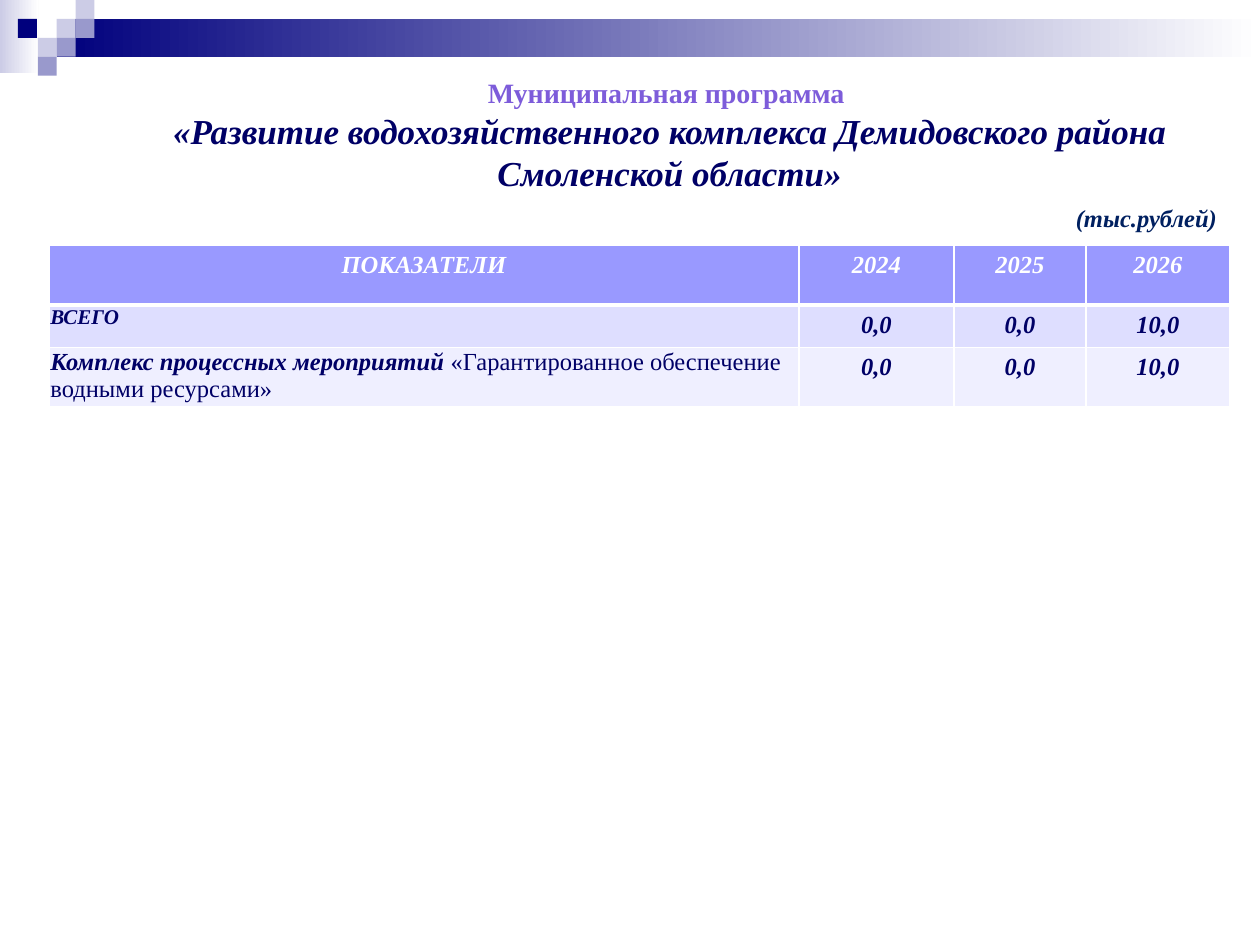
from dataclasses import dataclass

from lxml.etree import SubElement
from pptx import Presentation
from pptx.dml.color import RGBColor
from pptx.enum.shapes import MSO_SHAPE
from pptx.enum.text import MSO_ANCHOR, MSO_AUTO_SIZE, PP_ALIGN
from pptx.oxml.ns import qn
from pptx.util import Inches, Pt

WIDE, HIGH, UNIT = 10, 7.5, 0.15
NAVY, INK, PALE, MID, WHITE = "00007D", "000066", "CCCCE6", "9999CC", "FFFFFF"


@dataclass
class Tile:
    col: float
    row: float
    fill: str
    cols: float = 1
    rows: float = 1
    fade: str = ""


@dataclass
class Band:
    fill: str
    high: float
    ink: str
    label: list
    values: list
    edge: float = 1


TILES = [
    Tile(0, 0, PALE, 2.05, 3.87, WHITE),
    Tile(3, 1, NAVY, WIDE / UNIT - 3, 2, WHITE),
    Tile(3, 1, PALE),
    Tile(4, 0, PALE),
    Tile(4, 1, MID),
    Tile(2, 2, PALE),
    Tile(0.95, 1, NAVY),
    Tile(3, 2, MID),
    Tile(2, 3, MID),
]
WIDTHS = [5.95, 1.23, 1.05, 1.14]
BANDS = [
    Band("9999FF", 0.47, WHITE, [("ПОКАЗАТЕЛИ", {})], ["2024", "2025", "2026"], 3),
    Band("DEDEFF", 0.34, INK, [("ВСЕГО", {"size": 12})], ["0,0", "0,0", "10,0"]),
    Band("EFEFFF", 0.47, INK, [
        ("Комплекс процессных мероприятий ", {}),
        ("«Гарантированное обеспечение водными ресурсами»",
         {"bold": False, "slant": False}),
    ], ["0,0", "0,0", "10,0"]),
]


def paint(code: str) -> RGBColor:
    return RGBColor.from_string(code)


def write(para, text: str, size: float = 14, ink: str = INK, bold: bool = True,
          slant: bool = True, align=PP_ALIGN.CENTER) -> None:
    para.alignment = align
    run = para.add_run()
    run.text = text
    font = run.font
    font.name, font.size = "Times New Roman", Pt(size)
    font.bold, font.italic = bold, slant
    font.color.rgb = paint(ink)


def draw_tile(slide, tile: Tile) -> None:
    spot = (tile.col, tile.row, tile.cols, tile.rows)
    shape = slide.shapes.add_shape(
        MSO_SHAPE.RECTANGLE, *(Inches(n * UNIT) for n in spot))
    shape.shadow.inherit = False
    shape.line.fill.background()
    if tile.fade:
        shape.fill.gradient()
        shape.fill.gradient_angle = 0
        for stop, code in zip(shape.fill.gradient_stops, (tile.fill, tile.fade)):
            stop.color.rgb = paint(code)
    else:
        shape.fill.solid()
        shape.fill.fore_color.rgb = paint(tile.fill)


def fill_cell(cell, band: Band, top: float) -> None:
    props = cell._tc.get_or_add_tcPr()
    for side, wide in (("L", 1), ("R", 1), ("T", top), ("B", band.edge)):
        line = SubElement(props, qn(f"a:ln{side}"), w=str(Pt(wide)))
        solid = SubElement(line, qn("a:solidFill"))
        SubElement(solid, qn("a:srgbClr"), val=WHITE)
    cell.fill.solid()
    cell.fill.fore_color.rgb = paint(band.fill)


def draw_table(slide) -> None:
    table = slide.shapes.add_table(
        len(BANDS), len(WIDTHS), Inches(0.39), Inches(1.95),
        Inches(sum(WIDTHS)), Inches(sum(b.high for b in BANDS))).table
    for col, wide in zip(table.columns, WIDTHS):
        col.width = Inches(wide)
    top = 1
    for row, band in zip(table.rows, BANDS):
        row.height = Inches(band.high)
        head = band is BANDS[0]
        texts = [band.label] + [[(value, {})] for value in band.values]
        for i, (cell, runs) in enumerate(zip(row.cells, texts)):
            fill_cell(cell, band, top)
            label = i == 0 and not head
            if label:
                cell.margin_left = cell.margin_right = cell.margin_top = Inches(0.01)
                cell.margin_bottom = 0
            align = PP_ALIGN.LEFT if label else PP_ALIGN.CENTER
            for text, look in runs:
                write(cell.text_frame.paragraphs[0], text, ink=band.ink,
                      align=align, **look)
        top = band.edge


def draw_title(slide) -> None:
    title = slide.shapes.title
    title.left, title.top = Inches(1.02), Inches(0.55)
    title.width, title.height = Inches(8.59), Inches(1.04)
    frame = title.text_frame
    frame.word_wrap = True
    frame.auto_size = MSO_AUTO_SIZE.NONE
    frame.vertical_anchor = MSO_ANCHOR.TOP
    write(frame.paragraphs[0], "Муниципальная программа ", size=16,
          ink="7D5CDA", slant=False)
    write(frame.add_paragraph(),
          "«Развитие водохозяйственного комплекса Демидовского района "
          "Смоленской области»", size=20)


def draw_note(slide) -> None:
    box = slide.shapes.add_textbox(
        Inches(8.44), Inches(1.56), Inches(1.33), Inches(0.34))
    box.text_frame.word_wrap = False
    write(box.text_frame.paragraphs[0], "(тыс.рублей)", ink="002060",
          align=PP_ALIGN.LEFT)


def main() -> None:
    deck = Presentation()
    deck.slide_width, deck.slide_height = Inches(WIDE), Inches(HIGH)
    slide = deck.slides.add_slide(deck.slide_layouts[5])
    for tile in TILES:
        draw_tile(slide, tile)
    draw_title(slide)
    draw_table(slide)
    draw_note(slide)
    deck.save("out.pptx")


if __name__ == "__main__":
    main()
